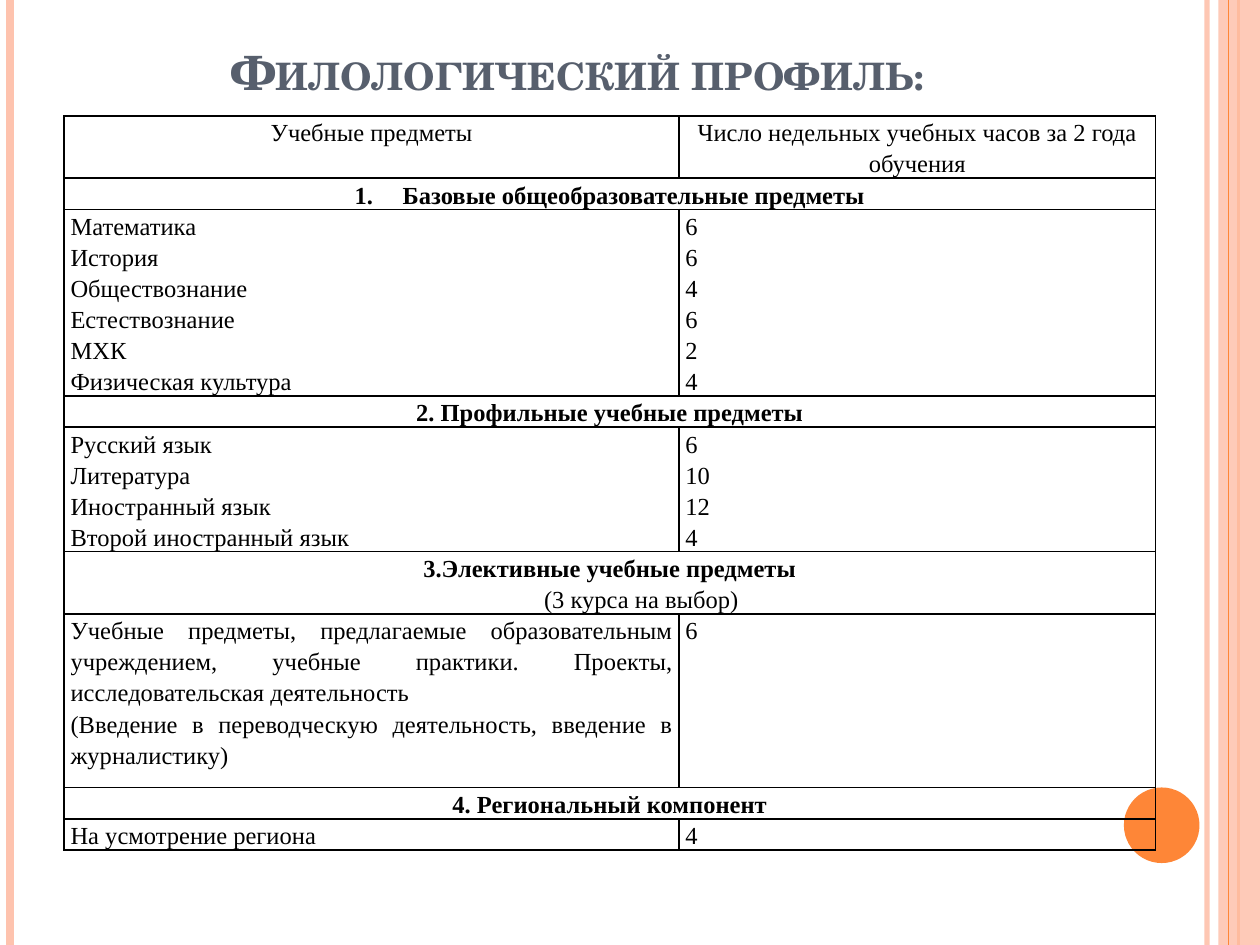
"""Build the slide with the study plan of the philological profile."""
from dataclasses import dataclass

from lxml.etree import SubElement
from pptx import Presentation
from pptx.dml.color import RGBColor as RGB
from pptx.enum.shapes import MSO_CONNECTOR as Connector, MSO_SHAPE as Shape
from pptx.enum.text import MSO_ANCHOR as Anchor, PP_ALIGN as Align
from pptx.oxml.ns import qn
from pptx.util import Inches, Pt


@dataclass(frozen=True)
class Theme:
    title_font: str = "TeX Gyre Schola"
    body_font: str = "Times New Roman"
    title_size: float = 27
    body_size: float = 14
    line_spacing: float = 1.15
    border_width: float = 1
    ink: str = "000000"
    heading: str = "575F6D"
    peach: str = "FEC3AE"
    orange: str = "FE8637"


THEME = Theme()
SLIDE_WIDTH, SLIDE_HEIGHT = 10, 7.5
TITLE = "Филологический профиль:"
HEADER = ("Учебные предметы", "Число недельных учебных часов за 2 года обучения")
SECTIONS = [
    {
        "name": "Базовые общеобразовательные предметы",
        "numbered": True,
        "subjects": [
            ("Математика", "6"),
            ("История", "6"),
            ("Обществознание", "4"),
            ("Естествознание", "6"),
            ("МХК", "2"),
            ("Физическая культура", "4"),
        ],
        "heights": (0.24, 1.44),
    },
    {
        "name": "2. Профильные учебные предметы",
        "subjects": [
            ("Русский язык", "6"),
            ("Литература", "10"),
            ("Иностранный язык", "12"),
            ("Второй иностранный язык", "4"),
        ],
        "heights": (0.24, 0.96),
    },
    {
        "name": "3.Элективные учебные предметы",
        "note": "(3 курса на выбор)",
        "subjects": [
            ("Учебные предметы, предлагаемые образовательным учреждением, "
             "учебные практики. Проекты, исследовательская деятельность", "6"),
            ("(Введение в переводческую деятельность, введение в журналистику)", ""),
        ],
        "heights": (0.48, 1.38),
    },
    {
        "name": "4. Региональный компонент",
        "subjects": [("На усмотрение региона", "4")],
        "heights": (0.24, 0.24),
    },
]
HEADER_HEIGHT = 0.48
COLUMN_WIDTHS = (4.88, 3.78)
TABLE_LEFT, TABLE_TOP = 0.51, 0.92
NUMBER_INDENT, NOTE_INDENT = 0.38, 0.5
STRIPES = [
    (9.58, THEME.peach, 3, 93),
    (0.08, THEME.peach, 4.5, 100),
    (9.83, THEME.orange, 1.5, 100),
]
THIN_STRIPE = (9.75, THEME.orange, 0.75, 100)
BAND = (Shape.RECTANGLE, (9.67, 0, 0.33, SLIDE_HEIGHT), THEME.peach, 87)
DISC = (Shape.OVAL, (8.92, 6.25, 0.6, 0.6), THEME.orange, 100)


def set_opacity(properties, percent):
    if percent < 100:
        color = next(properties.iter(qn("a:srgbClr")))
        SubElement(color, qn("a:alpha"), val=str(percent * 1000))


def add_stripe(slide, x, color, width, opacity):
    stripe = slide.shapes.add_connector(
        Connector.STRAIGHT, Inches(x), 0, Inches(x), Inches(SLIDE_HEIGHT))
    stripe.line.color.rgb = RGB.from_string(color)
    stripe.line.width = Pt(width)
    properties = stripe._element.spPr
    set_opacity(properties, opacity)
    SubElement(properties, qn("a:effectLst"))


def add_decoration(slide, kind, box, color, opacity):
    decoration = slide.shapes.add_shape(kind, *map(Inches, box))
    decoration.shadow.inherit = False
    decoration.fill.solid()
    decoration.fill.fore_color.rgb = RGB.from_string(color)
    decoration.line.fill.background()
    set_opacity(decoration._element.spPr, opacity)


def set_font(font, name, size, color, bold):
    font.name, font.size, font.bold = name, Pt(size), bold
    font.color.rgb = RGB.from_string(color)


def write_title(slide):
    title = slide.shapes.title
    title.left, title.top, title.width, title.height = map(Inches, (0.5, 0.3, 8.17, 0.54))
    title.text_frame.text = TITLE
    title.text_frame.vertical_anchor = Anchor.BOTTOM
    heading = title.text_frame.paragraphs[0]
    heading.alignment = Align.CENTER
    set_font(heading.font, THEME.title_font, THEME.title_size, THEME.heading, True)
    heading.runs[0].font._element.set("cap", "small")


def write_cell(cell, lines, align, bold=False):
    cell.margin_left = cell.margin_right = Inches(0.05)
    cell.margin_top = cell.margin_bottom = 0
    cell.text_frame.text = "\n".join(lines)
    for paragraph in cell.text_frame.paragraphs:
        paragraph.alignment = align
        paragraph.line_spacing = THEME.line_spacing
        set_font(paragraph.font, THEME.body_font, THEME.body_size, THEME.ink, bold)


def indent(paragraph, margin, first_line=0):
    properties = paragraph._p.get_or_add_pPr()
    properties.set("marL", str(Inches(margin)))
    properties.set("indent", str(Inches(first_line)))
    return properties


def write_section_name(cell, section):
    note = section.get("note")
    write_cell(cell, [section["name"]] + ([note] if note else []), Align.CENTER, True)
    name, *notes = cell.text_frame.paragraphs
    if section.get("numbered"):
        properties = indent(name, NUMBER_INDENT, -NUMBER_INDENT)
        number = SubElement(properties, qn("a:buAutoNum"), type="arabicPeriod")
        properties.find(qn("a:defRPr")).addprevious(number)
    for paragraph in notes:
        indent(paragraph, NOTE_INDENT)
        paragraph.font.bold = False


def draw_borders(cell):
    properties = cell._tc.get_or_add_tcPr()
    for side in ("lnL", "lnR", "lnT", "lnB"):
        border = SubElement(properties, qn(f"a:{side}"), w=str(Pt(THEME.border_width)))
        SubElement(SubElement(border, qn("a:solidFill")), qn("a:srgbClr"), val=THEME.ink)
    cell.fill.background()


def add_plan(slide):
    heights = [HEADER_HEIGHT] + [h for section in SECTIONS for h in section["heights"]]
    plan = slide.shapes.add_table(
        len(heights), len(COLUMN_WIDTHS), Inches(TABLE_LEFT), Inches(TABLE_TOP),
        Inches(sum(COLUMN_WIDTHS)), Inches(sum(heights))).table
    plan.first_row = plan.horz_banding = False
    for column, width in zip(plan.columns, COLUMN_WIDTHS):
        column.width = Inches(width)
    for row, height in zip(plan.rows, heights):
        row.height = Inches(height)
    for cell in plan.iter_cells():
        draw_borders(cell)
    for column, label in enumerate(HEADER):
        write_cell(plan.cell(0, column), [label], Align.CENTER)
    for index, section in enumerate(SECTIONS):
        row = 1 + 2 * index
        plan.cell(row, 0).merge(plan.cell(row, 1))
        write_section_name(plan.cell(row, 0), section)
        for column, entries in enumerate(zip(*section["subjects"])):
            write_cell(plan.cell(row + 1, column), filter(None, entries), Align.JUSTIFY)


def main():
    deck = Presentation()
    deck.slide_width, deck.slide_height = Inches(SLIDE_WIDTH), Inches(SLIDE_HEIGHT)
    slide = deck.slides.add_slide(deck.slide_layouts[5])
    for stripe in STRIPES:
        add_stripe(slide, *stripe)
    add_decoration(slide, *BAND)
    add_stripe(slide, *THIN_STRIPE)
    add_decoration(slide, *DISC)
    write_title(slide)
    add_plan(slide)
    deck.save("out.pptx")


if __name__ == "__main__":
    main()
